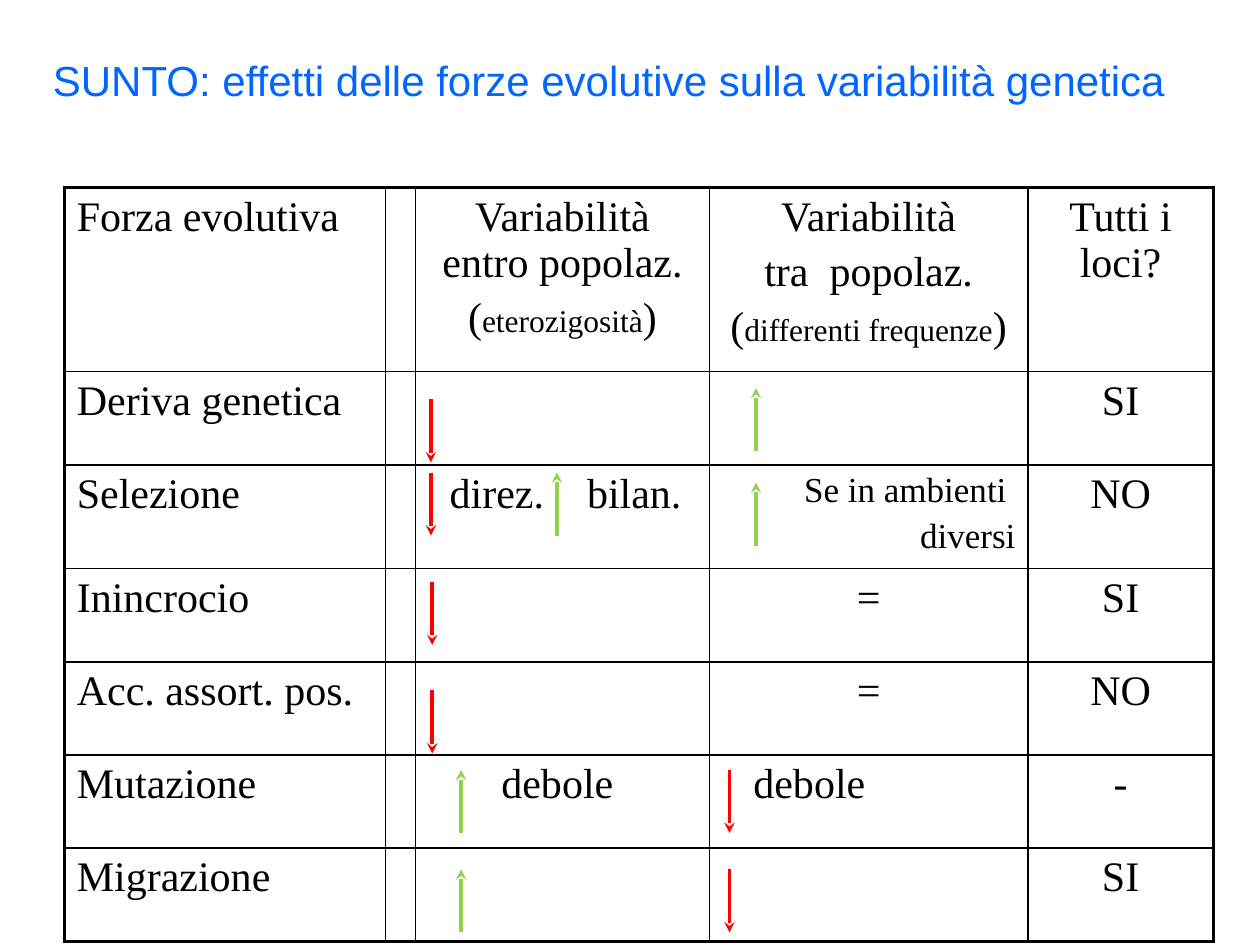
"""Build a slide that sums up how evolutionary forces affect genetic variability."""
from lxml.etree import SubElement
from pptx import Presentation
from pptx.dml.color import RGBColor
from pptx.enum.shapes import MSO_CONNECTOR
from pptx.enum.text import MSO_ANCHOR, MSO_AUTO_SIZE, PP_ALIGN
from pptx.oxml import parse_xml
from pptx.oxml.ns import nsdecls, qn
from pptx.util import Inches, Pt

BLACK, BLUE, RED, GREEN = "000000", "0066FF", "FF0000", "92D050"
LEFT, CENTER, RIGHT = PP_ALIGN.LEFT, PP_ALIGN.CENTER, PP_ALIGN.RIGHT
TABLE_LEFT, TABLE_TOP = 0.51, 1.49
COLUMN_WIDTHS = [2.55, 0.23, 2.33, 2.53, 1.47]
ROW_HEIGHTS = [1.46] + [0.74] * 6
ARROW_LENGTH = 0.5
TAB_STOP = 1.09

ROWS = [
    ["Forza evolutiva", "", "Variabilità entro popolaz.\n(eterozigosità)",
     "Variabilità\ntra  popolaz.\n(differenti frequenze)", "Tutti i loci?"],
    ["Deriva genetica", "", "", "", "SI"],
    ["Selezione", "", "direz.\tbilan.", "Se in ambienti \ndiversi", "NO"],
    ["Inincrocio", "", "", "=", "SI"],
    ["Acc. assort. pos.", "", "", "=", "NO"],
    ["Mutazione", "", "debole", "debole", "-"],
    ["Migrazione", "", "", "", "SI"],
]
ALIGNMENTS = {(2, 2): LEFT, (2, 3): RIGHT, (5, 2): LEFT, (5, 3): LEFT}
INDENTS = {(2, 2): 0.17, (5, 2): 0.58, (5, 3): 0.25}
FONT_SIZES = {(2, 3): 20}

# column, row, shift right, shift down, colour
ARROWS = [
    (2, 1, 0.13, 0.22, RED), (3, 1, 0.38, 0.13, GREEN),
    (2, 2, 0.13, 0.06, RED), (2, 2, 1.13, 0.06, GREEN), (3, 2, 0.38, 0.14, GREEN),
    (2, 3, 0.14, 0.19, RED),
    (2, 4, 0.14, 0.31, RED),
    (2, 5, 0.37, 0.20, GREEN), (3, 5, 0.17, 0.20, RED),
    (2, 6, 0.37, 0.25, GREEN), (3, 6, 0.17, 0.25, RED),
]


def color(hex_text):
    """Turn a hex string into a colour."""
    return RGBColor.from_string(hex_text)


def style_font(font, name, size, hex_text):
    """Set the typeface, size and colour of a font."""
    font.name, font.size = name, Pt(size)
    font.color.rgb = color(hex_text)


presentation = Presentation()
presentation.slide_width, presentation.slide_height = Inches(10), Inches(7.5)
slide = presentation.slides.add_slide(presentation.slide_layouts[5])

title = slide.shapes.title
title.left, title.top, title.width, title.height = map(Inches, (0.32, 0.38, 9.05, 0.5))
title.text_frame.text = "SUNTO: effetti delle forze evolutive sulla variabilità genetica"
title.text_frame.word_wrap = False
title.text_frame.auto_size = MSO_AUTO_SIZE.SHAPE_TO_FIT_TEXT
title.text_frame.vertical_anchor = MSO_ANCHOR.TOP
title.text_frame.paragraphs[0].alignment = LEFT
style_font(title.text_frame.paragraphs[0].font, "Arial", 24, BLUE)

table = slide.shapes.add_table(
    len(ROWS), len(COLUMN_WIDTHS), Inches(TABLE_LEFT), Inches(TABLE_TOP),
    Inches(sum(COLUMN_WIDTHS)), Inches(sum(ROW_HEIGHTS))).table
table.first_row = table.horz_banding = False
for column, width in zip(table.columns, COLUMN_WIDTHS):
    column.width = Inches(width)
for row, height in zip(table.rows, ROW_HEIGHTS):
    row.height = Inches(height)

last_row, last_column = len(ROWS) - 1, len(COLUMN_WIDTHS) - 1
for row_index, texts in enumerate(ROWS):
    for column_index, text in enumerate(texts):
        place = row_index, column_index
        cell = table.cell(*place)
        cell.fill.background()
        cell.margin_left = Inches(0.1 + INDENTS.get(place, 0))
        outer_edges = {"L": column_index == 0, "R": column_index == last_column,
                       "T": row_index == 0, "B": row_index == last_row}
        for position, (side, is_outer) in enumerate(outer_edges.items()):
            border = parse_xml(
                f'<a:ln{side} {nsdecls("a")} w="{Pt(2.25 if is_outer else 1)}">'
                f'<a:solidFill><a:srgbClr val="{BLACK}"/></a:solidFill></a:ln{side}>')
            cell._tc.get_or_add_tcPr().insert(position, border)
        for line_index, line in enumerate(text.split("\n")):
            frame = cell.text_frame
            paragraph = frame.add_paragraph() if line_index else frame.paragraphs[0]
            paragraph.alignment = ALIGNMENTS.get(place, CENTER if column_index else LEFT)
            size = FONT_SIZES.get(place, 24)
            paragraph.space_before = Pt(size * 0.2)
            if "\t" in line:
                tabs = SubElement(paragraph._p.get_or_add_pPr(), qn("a:tabLst"))
                SubElement(tabs, qn("a:tab"), pos=str(Inches(TAB_STOP)), algn="l")
            style_font(paragraph.font, "Times New Roman", size, BLACK)
            in_brackets = line.startswith("(")
            for part in ("(", line[1:-1], ")") if in_brackets else filter(None, [line]):
                run = paragraph.add_run()
                run.text = part
                if in_brackets and len(part) > 1:
                    run.font.size = Pt(18)

for column_index, row_index, shift_right, shift_down, line_color in ARROWS:
    x = Inches(TABLE_LEFT + sum(COLUMN_WIDTHS[:column_index]) + shift_right)
    top = Inches(TABLE_TOP + sum(ROW_HEIGHTS[:row_index]) + shift_down)
    bottom = top + Inches(ARROW_LENGTH)
    start, end = (bottom, top) if line_color == GREEN else (top, bottom)
    arrow = slide.shapes.add_connector(MSO_CONNECTOR.STRAIGHT, x, start, x, end)
    arrow.line.color.rgb = color(line_color)
    arrow.line.width = Pt(2)
    SubElement(arrow.line._get_or_add_ln(), qn("a:tailEnd"), type="stealth")
    SubElement(arrow._element.spPr, qn("a:effectLst"))

presentation.save("out.pptx")
